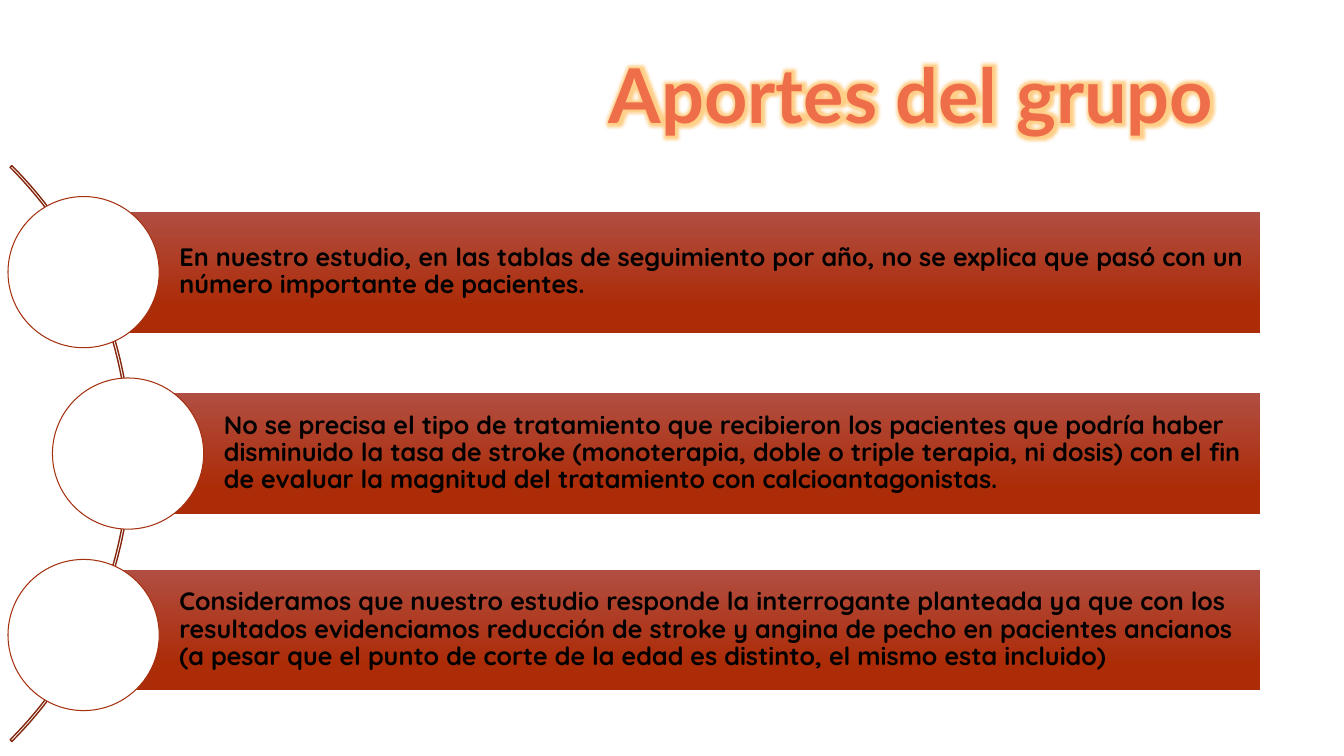
from lxml import etree
from pptx import Presentation
from pptx import util as u
from pptx.dml.color import RGBColor
from pptx.enum import shapes, text
from pptx.oxml.ns import qn

WIDTH, HEIGHT = u.Inches(13.33), u.Inches(7.5)
CELL = HEIGHT / 50
CIRCLE, BAR = 10, 8
BAR_RIGHT = 83.33
FIRST_CENTER, PITCH = 18, 12
COLORS = {
    "title": "EE6E4A", "glow": "FFCF87", "text": "000000", "circle": "FFFFFF",
    "arc": "84260C", "outline": "A5300F", "bar_top": "B14E42", "bar_bottom": "AC2C08",
}
CONTRIBUTIONS = [
    (5.53, 0, "En nuestro estudio, en las tablas de seguimiento por año, no se explica que pasó "
     "con un número importante de pacientes."),
    (8.47, 0, "No se precisa el tipo de tratamiento que recibieron los pacientes que podría haber "
     "disminuido la tasa de stroke (monoterapia, doble o triple terapia, ni dosis) con el fin "
     "de evaluar la magnitud del tratamiento con calcioantagonistas."),
    (5.53, -0.33, "Consideramos que nuestro estudio responde la interrogante planteada ya que con los "
     "resultados evidenciamos reducción de stroke y angina de pecho en pacientes ancianos "
     "(a pesar que el punto de corte de la edad es distinto, el mismo esta incluido)"),
]


def color(name):
    """Return the named colour."""
    return RGBColor.from_string(COLORS[name])


def cells(*lengths):
    """Convert grid cells to slide lengths."""
    return [round(length * CELL) for length in lengths]


def add_plain_shape(slide, kind, left, top, width, height):
    """Add a shadowless shape placed in grid cells."""
    shape = slide.shapes.add_shape(kind, *cells(left, top, width, height))
    shape.shadow.inherit = False
    return shape


def outline(shape, name, points):
    """Give a shape a coloured outline."""
    shape.line.color.rgb = color(name)
    shape.line.width = u.Pt(points)


def format_text(paragraph, font_name, size, name):
    """Format every run of a paragraph in bold."""
    for run in paragraph.runs:
        run.font.name = font_name
        run.font.size = u.Pt(size)
        run.font.bold = True
        run.font.color.rgb = color(name)


def add_glow(run, name, points):
    """Surround a coloured run with a glow."""
    fill = run.font._element.find(qn("a:solidFill"))
    effects = etree.Element(qn("a:effectLst"))
    glow = etree.SubElement(effects, qn("a:glow"), rad=str(u.Pt(points)))
    etree.SubElement(glow, qn("a:srgbClr"), val=COLORS[name])
    fill.addnext(effects)


def add_title(slide, wording):
    """Fill and place the glowing title."""
    title = slide.shapes.title
    title.left, title.top = round(WIDTH * 0.358), round(HEIGHT * 0.065)
    title.width, title.height = round(WIDTH * 0.64), round(HEIGHT * 0.116)
    frame = title.text_frame
    frame.text = wording
    frame.word_wrap = True
    frame.auto_size = text.MSO_AUTO_SIZE.NONE
    frame.vertical_anchor = text.MSO_ANCHOR.MIDDLE
    paragraph = frame.paragraphs[0]
    paragraph.alignment = text.PP_ALIGN.CENTER
    format_text(paragraph, "Lato", 54, "title")
    add_glow(paragraph.runs[0], "glow", 8)


def add_arc(slide):
    """Add the thin arc that links the circles."""
    size = 53.87
    arc = add_plain_shape(slide, shapes.MSO_SHAPE.BLOCK_ARC, -45.2,
                          FIRST_CENTER + PITCH - size / 2, size, size)
    for index, value in enumerate((189, 27, 0.003)):
        arc.adjustments[index] = value
    arc.fill.background()
    outline(arc, "arc", 1)


def add_bar(slide, left, center, wording):
    """Add a gradient bar holding one contribution."""
    bar = add_plain_shape(slide, shapes.MSO_SHAPE.RECTANGLE, left, center - BAR / 2,
                          BAR_RIGHT - left, BAR)
    bar.line.fill.background()
    bar.fill.gradient()
    bar.fill.gradient_angle = 270
    for stop, name, position in zip(bar.fill.gradient_stops, ("bar_top", "bar_bottom"), (0, 0.78)):
        stop.color.rgb = color(name)
        stop.position = position
    frame = bar.text_frame
    frame.text = wording
    frame.word_wrap = True
    frame.vertical_anchor = text.MSO_ANCHOR.MIDDLE
    frame.margin_left = u.Inches(0.95)
    frame.margin_top = frame.margin_right = frame.margin_bottom = u.Inches(0.05)
    paragraph = frame.paragraphs[0]
    paragraph.alignment = text.PP_ALIGN.LEFT
    paragraph.line_spacing = 0.9
    format_text(paragraph, "Quicksand", 18, "text")


def add_circle(slide, center_x, center_y):
    """Add a white circle around a bar's left end."""
    circle = add_plain_shape(slide, shapes.MSO_SHAPE.OVAL, center_x - CIRCLE / 2,
                             center_y - CIRCLE / 2, CIRCLE, CIRCLE)
    circle.fill.solid()
    circle.fill.fore_color.rgb = color("circle")
    outline(circle, "outline", 0.75)


def main():
    """Build and save the slide."""
    presentation = Presentation()
    presentation.slide_width, presentation.slide_height = WIDTH, HEIGHT
    slide = presentation.slides.add_slide(presentation.slide_layouts[5])
    add_title(slide, "Aportes del grupo")
    add_arc(slide)
    for row, (left, shift, wording) in enumerate(CONTRIBUTIONS):
        center = FIRST_CENTER + row * PITCH
        add_bar(slide, left, center + shift, wording)
        add_circle(slide, left, center)
    presentation.save("out.pptx")


if __name__ == "__main__":
    main()
